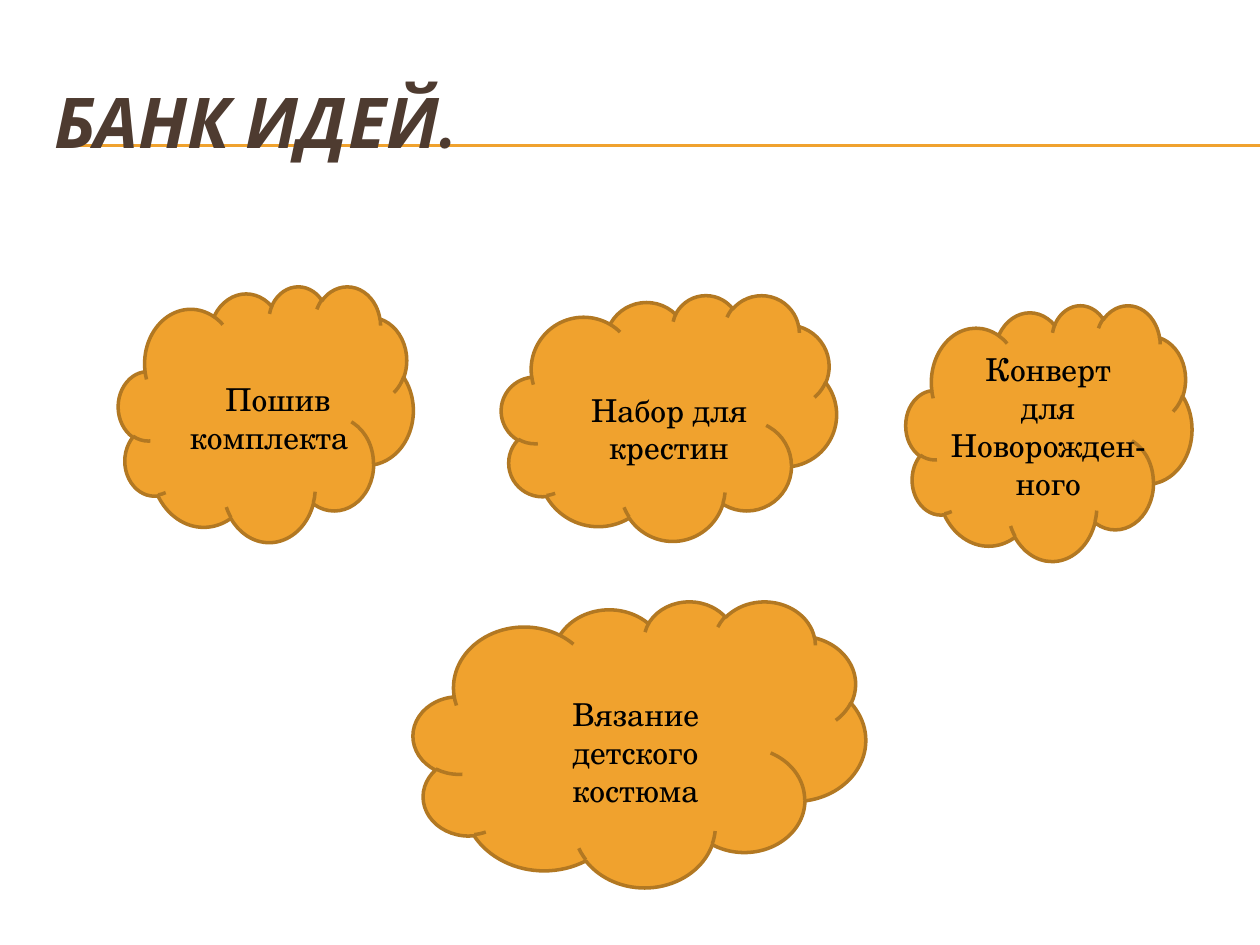
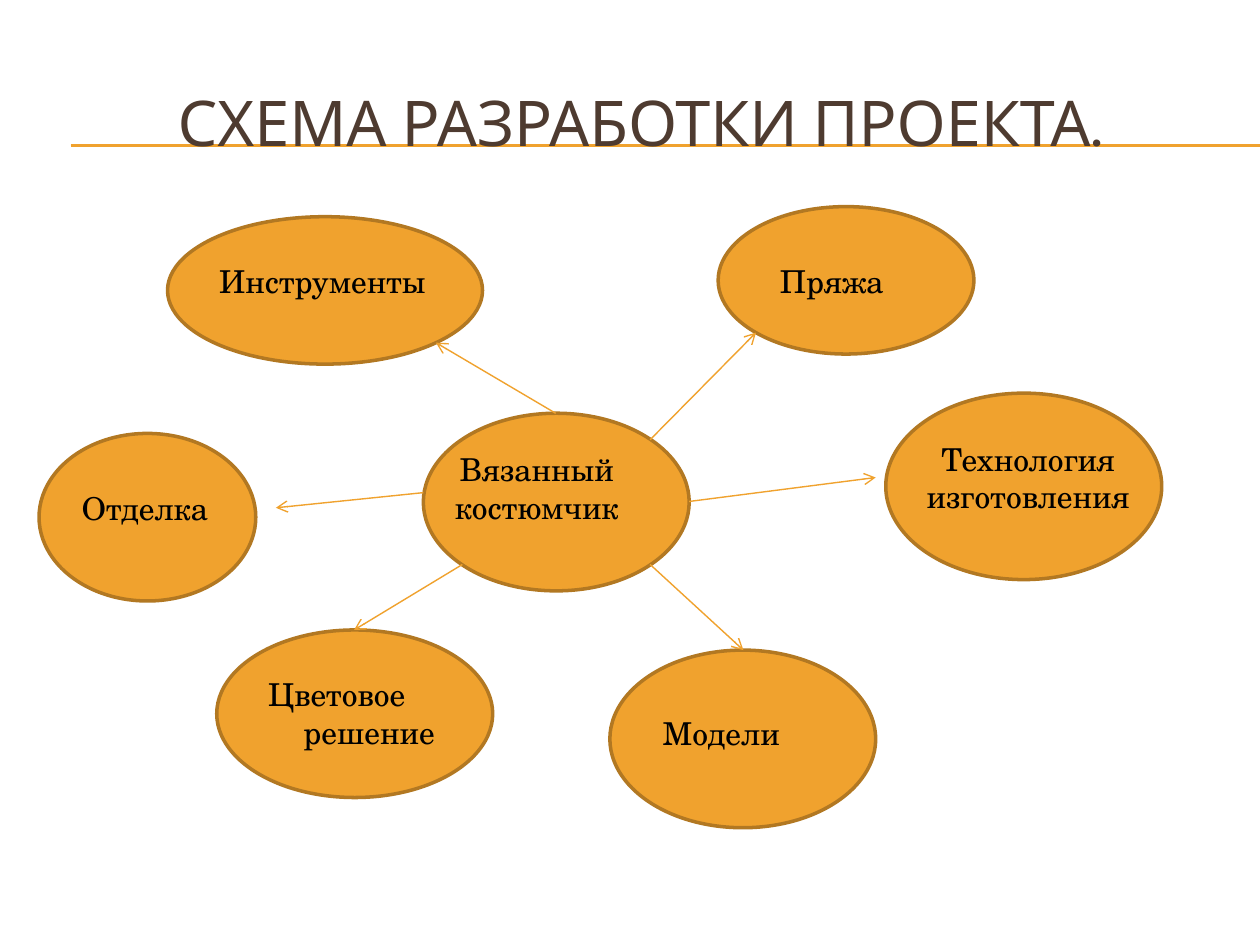
"""Build two slides: a bank of ideas in clouds and a project development scheme."""
from dataclasses import dataclass

from lxml import etree
from pptx import Presentation
from pptx import util as u
from pptx.dml.color import RGBColor
from pptx.enum import shapes, text
from pptx.oxml.ns import qn

TITLE_FONT = "Karla"
BODY_FONT = "TeX Gyre Schola"
AMBER = "F0A22E"
AMBER_DARK = "B27822"
BROWN = "4E3B30"
BLACK = "000000"
TITLE_ONLY = 5
RULE_HEIGHTS = (1.15, 1.16)
LEFT = text.PP_ALIGN.LEFT
CENTER = text.PP_ALIGN.CENTER


@dataclass(frozen=True)
class Box:
    """A frame in inches."""
    left: float
    top: float
    width: float
    height: float

    def lengths(self) -> list:
        """Return the frame as slide lengths."""
        return [u.Inches(n) for n in (self.left, self.top, self.width, self.height)]


@dataclass(frozen=True)
class Line:
    """One paragraph of a label."""
    words: str
    align: text.PP_ALIGN = CENTER
    indent: float = 0


@dataclass(frozen=True)
class Label:
    """A text box with its paragraphs."""
    box: Box
    lines: tuple[Line, ...]


@dataclass(frozen=True)
class Arrow:
    """A straight arrow between two points in inches."""
    start: tuple[float, float]
    end: tuple[float, float]


IDEA_CLOUDS = (
    Box(3.28, 4.77, 3.59, 2.27),
    Box(7.19, 2.42, 2.27, 2.03),
    Box(3.98, 2.34, 2.66, 1.95),
    Box(0.94, 2.27, 2.34, 2.03),
)
IDEA_LABELS = (
    Label(Box(1.41, 2.97, 1.48, 0.71),
          (Line("Пошив", LEFT, 0.28), Line("комплекта", LEFT))),
    Label(Box(4.45, 3.05, 1.72, 0.71), (Line("Набор для крестин"),)),
    Label(Box(7.42, 2.73, 1.8, 1.62),
          (Line("Конверт"), Line("для"), Line("Новорожден-"), Line("ного"))),
    Label(Box(3.94, 5.47, 2.21, 0.71), (Line("Вязание детского костюма"),)),
)
SCHEME_OVALS = (
    Box(4.84, 5.16, 2.11, 1.41),
    Box(1.72, 5, 2.19, 1.33),
    Box(0.31, 3.44, 1.72, 1.33),
    Box(1.33, 1.72, 2.5, 1.17),
    Box(5.7, 1.64, 2.03, 1.17),
    Box(7.03, 3.12, 2.19, 1.48),
    Box(3.36, 3.28, 2.11, 1.41),
)
SCHEME_LABELS = (
    Label(Box(1.64, 2.03, 1.88, 0.4), (Line("Инструменты", LEFT),)),
    Label(Box(6.09, 2.03, 2.11, 0.4), (Line("Пряжа", LEFT),)),
    Label(Box(6.95, 3.44, 2.42, 0.71), (Line("Технология изготовления"),)),
    Label(Box(5.16, 5.62, 2.19, 0.4), (Line("Модели", LEFT),)),
    Label(Box(2.03, 5.31, 1.8, 0.71), (Line("Цветовое", LEFT), Line("решение"))),
    Label(Box(0.55, 3.83, 1.64, 0.4), (Line("Отделка", LEFT),)),
    Label(Box(2.97, 3.52, 2.58, 0.71), (Line("Вязанный костюмчик"),)),
)
SCHEME_ARROWS = (
    Arrow((5.16, 4.48), (5.9, 5.16)),
    Arrow((5.47, 3.98), (6.95, 3.79)),
    Arrow((5.16, 3.49), (6, 2.64)),
    Arrow((4.41, 3.28), (3.46, 2.72)),
    Arrow((3.36, 3.91), (2.19, 4.03)),
    Arrow((3.67, 4.48), (2.81, 5)),
)


def color(value: str) -> RGBColor:
    """Turn a hex string into a colour."""
    return RGBColor.from_string(value)


def write(paragraph, words: str, *, size: float = 18, font: str = BODY_FONT,
          fill: str = BLACK, bold: bool = False, italic: bool = False,
          align: text.PP_ALIGN = LEFT, indent: float = 0) -> None:
    """Write formatted words into a paragraph."""
    paragraph.alignment = align
    if indent:
        paragraph._p.get_or_add_pPr().set("marL", str(u.Inches(indent)))
    run = paragraph.add_run()
    run.text = words
    run.font.size = u.Pt(size)
    run.font.name = font
    run.font.bold = bold
    run.font.italic = italic
    run.font.color.rgb = color(fill)


def add_line(slide, start: tuple[float, float], end: tuple[float, float], *,
             width: float = 0.75, arrow: bool = False) -> None:
    """Draw a straight amber line, with an arrowhead if asked."""
    ends = [u.Inches(n) for n in (*start, *end)]
    connector = slide.shapes.add_connector(shapes.MSO_CONNECTOR.STRAIGHT, *ends)
    connector.line.color.rgb = color(AMBER)
    connector.line.width = u.Pt(width)
    properties = connector.element.spPr
    if arrow:
        etree.SubElement(properties.find(qn("a:ln")), qn("a:tailEnd"), type="arrow")
    etree.SubElement(properties, qn("a:effectLst"))


def add_bubble(slide, kind: shapes.MSO_SHAPE, box: Box) -> None:
    """Draw an amber preset shape with a darker outline."""
    shape = slide.shapes.add_shape(kind, *box.lengths())
    shape.shadow.inherit = False
    shape.fill.solid()
    shape.fill.fore_color.rgb = color(AMBER)
    shape.line.color.rgb = color(AMBER_DARK)
    shape.line.width = u.Pt(2)


def add_label(slide, label: Label) -> None:
    """Add a wrapped text box with one paragraph for each line."""
    frame = slide.shapes.add_textbox(*label.box.lengths()).text_frame
    frame.word_wrap = True
    frame.auto_size = text.MSO_AUTO_SIZE.SHAPE_TO_FIT_TEXT
    for number, line in enumerate(label.lines):
        paragraph = frame.add_paragraph() if number else frame.paragraphs[0]
        write(paragraph, line.words, align=line.align, indent=line.indent)


def add_slide(presentation, heading: str, **title_format):
    """Add a slide with the shared rules behind its title."""
    slide = presentation.slides.add_slide(presentation.slide_layouts[TITLE_ONLY])
    for height in RULE_HEIGHTS:
        add_line(slide, (0.56, height), (10, height))
    title = slide.shapes.title
    slide.shapes.element.append(title.element)
    title.left, title.top, title.width, title.height = Box(0.33, 0.5, 9.5, 0.92).lengths()
    frame = title.text_frame
    frame.auto_size = text.MSO_AUTO_SIZE.NONE
    frame.vertical_anchor = text.MSO_ANCHOR.MIDDLE
    write(frame.paragraphs[0], heading, font=TITLE_FONT, fill=BROWN, **title_format)
    return slide


def add_diagram(slide, kind: shapes.MSO_SHAPE, bubbles: tuple[Box, ...],
                labels: tuple[Label, ...], arrows: tuple[Arrow, ...] = ()) -> None:
    """Draw bubbles, their labels and the arrows between them."""
    for box in bubbles:
        add_bubble(slide, kind, box)
    for label in labels:
        add_label(slide, label)
    for arrow in arrows:
        add_line(slide, arrow.start, arrow.end, width=0.79, arrow=True)


def main() -> None:
    """Build and save the presentation."""
    presentation = Presentation()
    presentation.slide_width = u.Inches(10)
    presentation.slide_height = u.Inches(7.5)
    ideas = add_slide(presentation, "БАНК ИДЕЙ.", size=40, bold=True, italic=True)
    add_diagram(ideas, shapes.MSO_SHAPE.CLOUD, IDEA_CLOUDS, IDEA_LABELS)
    scheme = add_slide(presentation, "СХЕМА РАЗРАБОТКИ ПРОЕКТА.", size=36, align=CENTER)
    add_diagram(scheme, shapes.MSO_SHAPE.OVAL, SCHEME_OVALS, SCHEME_LABELS, SCHEME_ARROWS)
    presentation.save("out.pptx")


if __name__ == "__main__":
    main()
